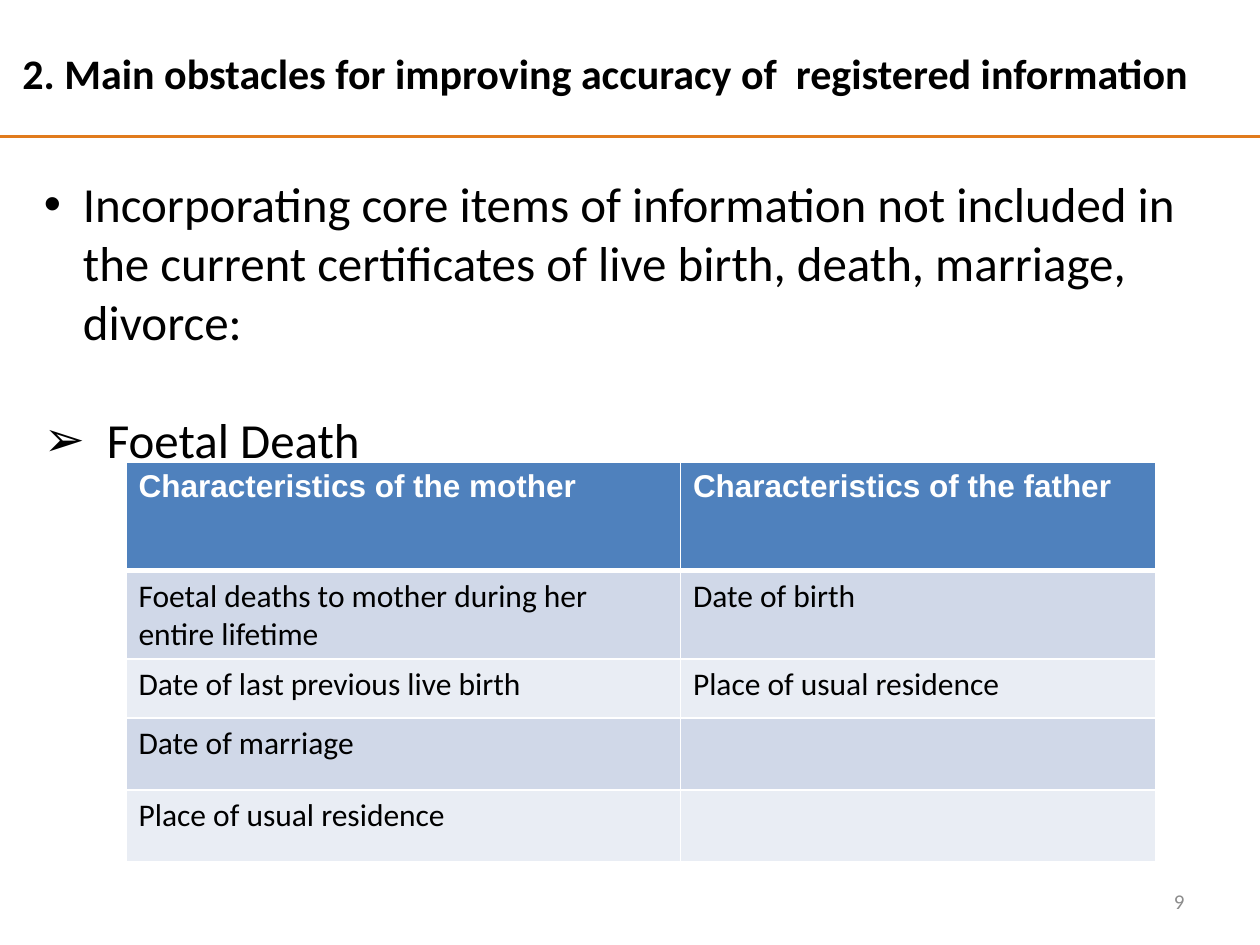
import pptx
import pptx.util
import pptx.dml.color
import pptx.enum.shapes
import pptx.enum.text
import pptx.oxml
import pptx.oxml.ns
from lxml import etree

Inches, Pt = pptx.util.Inches, pptx.util.Pt
qn = pptx.oxml.ns.qn

ROWS = [
    ("Characteristics of the mother", "Characteristics of the father"),
    ("Foetal deaths to mother during her entire lifetime", "Date of birth"),
    ("Date of last previous live birth", "Place of usual residence"),
    ("Date of marriage", ""),
    ("Place of usual residence", ""),
]
COL_WIDTHS = [4.4, 3.77]
ROW_HEIGHTS = [0.86, 0.7, 0.47, 0.57, 0.57]
HEADER_FILL, BANDS = "4F81BD", ("E9EDF4", "D0D8E8")


def rgb(hex_color):
    return pptx.dml.color.RGBColor.from_string(hex_color)


def add_run(p, text, size, color="000000", bold=False, font="Calibri"):
    r = p.add_run()
    r.text = text
    r.font.size, r.font.bold, r.font.name = Pt(size), bold, font
    r.font.color.rgb = rgb(color)


def add_text_box(s, left, top, width, height):
    tf = s.shapes.add_textbox(Inches(left), Inches(top),
                              Inches(width), Inches(height)).text_frame
    tf.word_wrap = True
    return tf


def set_bullet(p, char, indent):
    pPr = p._p.get_or_add_pPr()
    pPr.set("marL", str(Inches(indent)))
    pPr.set("indent", str(-Inches(indent)))
    etree.SubElement(pPr, qn("a:buFont")).set("typeface", "Arial")
    etree.SubElement(pPr, qn("a:buChar")).set("char", char)


def add_rule(s, y, color, width):
    line = s.shapes.add_connector(pptx.enum.shapes.MSO_CONNECTOR.STRAIGHT,
                                  0, Inches(y), Inches(10), Inches(y))
    line.line.color.rgb = rgb(color)
    line.line.width = Pt(width)
    etree.SubElement(line._element.spPr, qn("a:effectLst"))


def set_borders(cell, color, widths):
    """Widths in points for the left, right, top and bottom borders."""
    tcPr = cell._tc.get_or_add_tcPr()
    for i, (side, width) in enumerate(zip("LRTB", widths)):
        ln = etree.Element(qn("a:ln" + side), w=str(Pt(width)))
        fill = etree.SubElement(ln, qn("a:solidFill"))
        etree.SubElement(fill, qn("a:srgbClr")).set("val", color)
        tcPr.insert(i, ln)


def add_table(s, left, top):
    table = s.shapes.add_table(
        len(ROWS), len(COL_WIDTHS), Inches(left), Inches(top),
        Inches(sum(COL_WIDTHS)), Inches(sum(ROW_HEIGHTS))).table
    for col, width in zip(table.columns, COL_WIDTHS):
        col.width = Inches(width)
    for i, texts in enumerate(ROWS):
        table.rows[i].height = Inches(ROW_HEIGHTS[i])
        header = i == 0
        for j, text in enumerate(texts):
            cell = table.cell(i, j)
            cell.fill.solid()
            cell.fill.fore_color.rgb = rgb(HEADER_FILL if header else BANDS[i % 2])
            set_borders(cell, "FFFFFF", (1, 1, 3 if i == 1 else 1, 3 if header else 1))
            p = cell.text_frame.paragraphs[0]
            if header:
                add_run(p, text, 18, "FFFFFF", True, "Arial")
            elif text:
                add_run(p, text, 18)


def main():
    prs = pptx.Presentation()
    prs.slide_width, prs.slide_height = Inches(10), Inches(7.5)
    s = prs.slides.add_slide(prs.slide_layouts[6])

    # Rule under the title
    add_rule(s, 1.08, "E17B1C", 1.65)

    # Slide number
    tf = add_text_box(s, 7.17, 6.95, 2.33, 0.4)
    tf.vertical_anchor = pptx.enum.text.MSO_ANCHOR.MIDDLE
    tf.paragraphs[0].alignment = pptx.enum.text.PP_ALIGN.RIGHT
    add_run(tf.paragraphs[0], "9", 12, "8C8C8C")

    # Title
    tf = add_text_box(s, 0.08, 0.33, 9.75, 0.81)
    add_run(tf.paragraphs[0], "2. Main obstacles for improving accuracy of  "
            "registered information", 24, bold=True)

    # Bullets
    tf = add_text_box(s, 0.25, 1.33, 9.42, 4.07)
    p = tf.paragraphs[0]
    set_bullet(p, "•", 0.31)
    add_run(p, "Incorporating core items of information not included in the "
            "current certificates of live birth, death, marriage, divorce:", 28)
    p = tf.add_paragraph()
    set_bullet(p, "➢", 0.5)
    p.space_before = Pt(34)
    add_run(p, "Foetal Death", 28)

    # Characteristics table
    add_table(s, 1, 3.67)

    prs.save("out.pptx")


if __name__ == "__main__":
    main()
